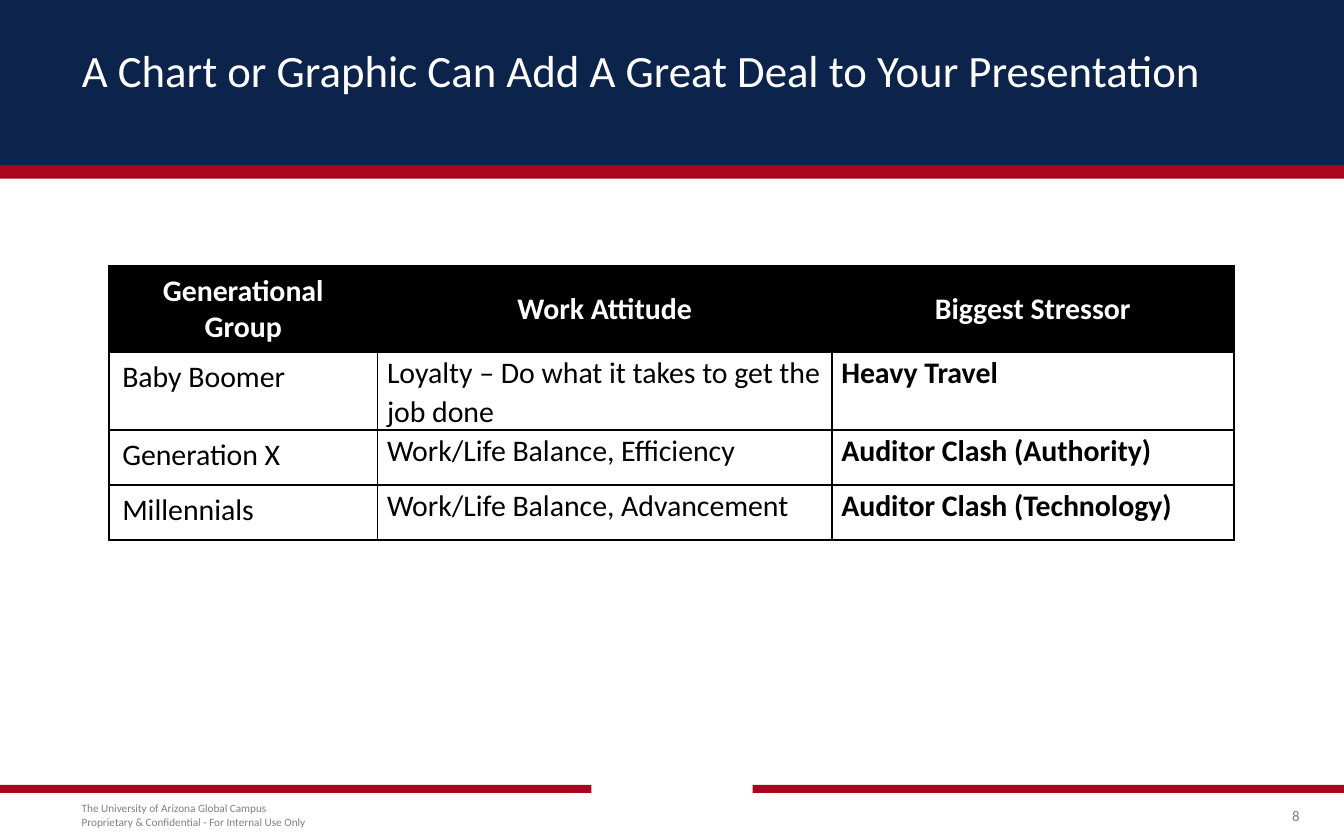
from dataclasses import dataclass

from lxml import etree
from pptx import Presentation, util as u
from pptx.dml.color import RGBColor
from pptx.enum import shapes, text
from pptx.oxml.ns import qn


@dataclass(frozen=True)
class Theme:
    font: str = "Calibri"
    navy: str = "0C234B"
    red: str = "AB0520"
    grey: str = "808080"
    white: str = "FFFFFF"
    black: str = "000000"
    title: int = 24
    body: int = 16
    number: int = 8
    footer: int = 6


THEME = Theme()
WIDTH, HEIGHT = 10, 6.25
MARGIN = 0.51
FOOTER_TOP, FOOTER_HEIGHT = 5.94, 0.25
TABLE_LEFT, TABLE_TOP = 0.81, 1.98
COLUMNS = [2, 3.38, 2.99]
ROWS = [0.64, 0.58, 0.41, 0.41]
HEADINGS = ["Generational Group", "Work Attitude", "Biggest Stressor"]
GENERATIONS = [
    ["Baby Boomer", "Loyalty – Do what it takes to get the job done", "Heavy Travel"],
    ["Generation X", "Work/Life Balance, Efficiency", "Auditor Clash (Authority)"],
    ["Millennials", "Work/Life Balance, Advancement", "Auditor Clash (Technology)"],
]


def inches(*lengths):
    return [u.Inches(length) for length in lengths]


def add_bar(slide, left, top, width, height, color):
    sp = slide.shapes.add_shape(shapes.MSO_SHAPE.RECTANGLE, *inches(left, top, width, height))
    sp.shadow.inherit = False
    sp.fill.solid()
    sp.fill.fore_color.rgb = RGBColor.from_string(color)
    sp.line.fill.background()


def add_run(p, words, size, color, bold=False):
    r = p.add_run()
    r.text = words
    r.font.name = THEME.font
    r.font.size = u.Pt(size)
    r.font.bold = bold
    r.font.color.rgb = RGBColor.from_string(color)


def add_text(slide, box, lines, size, color, insets=(0, 0, 0, 0),
             align=text.PP_ALIGN.LEFT, spacing=None):
    """Add one paragraph, with a line break between its lines."""
    tf = slide.shapes.add_textbox(*inches(*box)).text_frame
    tf.word_wrap = True
    tf.vertical_anchor = text.MSO_ANCHOR.MIDDLE
    tf.margin_left, tf.margin_top, tf.margin_right, tf.margin_bottom = inches(*insets)
    p = tf.paragraphs[0]
    p.alignment = align
    p.line_spacing = spacing
    for i, line in enumerate(lines):
        if i:
            p.add_line_break()
        add_run(p, line, size, color)


def add_borders(cell):
    tc_pr = cell._tc.get_or_add_tcPr()
    for side in ("lnL", "lnR", "lnT", "lnB"):
        ln = etree.SubElement(tc_pr, qn(f"a:{side}"), w=str(u.Pt(1)))
        fill = etree.SubElement(ln, qn("a:solidFill"))
        etree.SubElement(fill, qn("a:srgbClr"), val=THEME.black)


def fill_cell(cell, words, row, column):
    header = row == 0
    add_borders(cell)
    cell.fill.solid()
    cell.fill.fore_color.rgb = RGBColor.from_string(THEME.black if header else THEME.white)
    p = cell.text_frame.paragraphs[0]
    if header:
        cell.vertical_anchor = text.MSO_ANCHOR.MIDDLE
        p.alignment = text.PP_ALIGN.CENTER
    elif column > 0:
        cell.margin_left = cell.margin_right = u.Inches(0.07)
        cell.margin_top = cell.margin_bottom = 0
        p.line_spacing = 1.07
    add_run(p, words, THEME.body, THEME.white if header else THEME.black,
            bold=header or column == len(COLUMNS) - 1)


def add_generation_table(slide):
    frame = slide.shapes.add_table(len(ROWS), len(COLUMNS), *inches(
        TABLE_LEFT, TABLE_TOP, sum(COLUMNS), sum(ROWS)))
    table = frame.table
    table.horz_banding = False
    for column, width in zip(table.columns, COLUMNS):
        column.width = u.Inches(width)
    for row, height in zip(table.rows, ROWS):
        row.height = u.Inches(height)
    for i, record in enumerate([HEADINGS, *GENERATIONS]):
        for j, words in enumerate(record):
            fill_cell(table.cell(i, j), words, i, j)


def main():
    prs = Presentation()
    prs.slide_width, prs.slide_height = inches(WIDTH, HEIGHT)
    slide = prs.slides.add_slide(prs.slide_layouts[6])

    add_bar(slide, 0, 0, WIDTH, 1.33, THEME.red)
    add_bar(slide, 0, 0, WIDTH, 1.23, THEME.navy)
    rule = 0.44 * WIDTH
    for left in (0, WIDTH - rule):
        add_bar(slide, left, 5.84, rule, 0.06, THEME.red)

    add_text(slide, (MARGIN, FOOTER_TOP, 2.06, FOOTER_HEIGHT),
             ["The University of Arizona Global Campus",
              "Proprietary & Confidential - For Internal Use Only"],
             THEME.footer, THEME.grey, insets=(0.1, 0, 0, 0))
    add_text(slide, (MARGIN, 0.34, 8.99, 0.4),
             ["A Chart or Graphic Can Add A Great Deal to Your Presentation"],
             THEME.title, THEME.white, insets=(0.1, 0.1, 0.1, 0.1), spacing=0.9)
    add_text(slide, (9.16, FOOTER_TOP, 0.51, FOOTER_HEIGHT), ["8"],
             THEME.number, THEME.grey, align=text.PP_ALIGN.RIGHT)
    add_generation_table(slide)
    prs.save("out.pptx")


if __name__ == "__main__":
    main()
